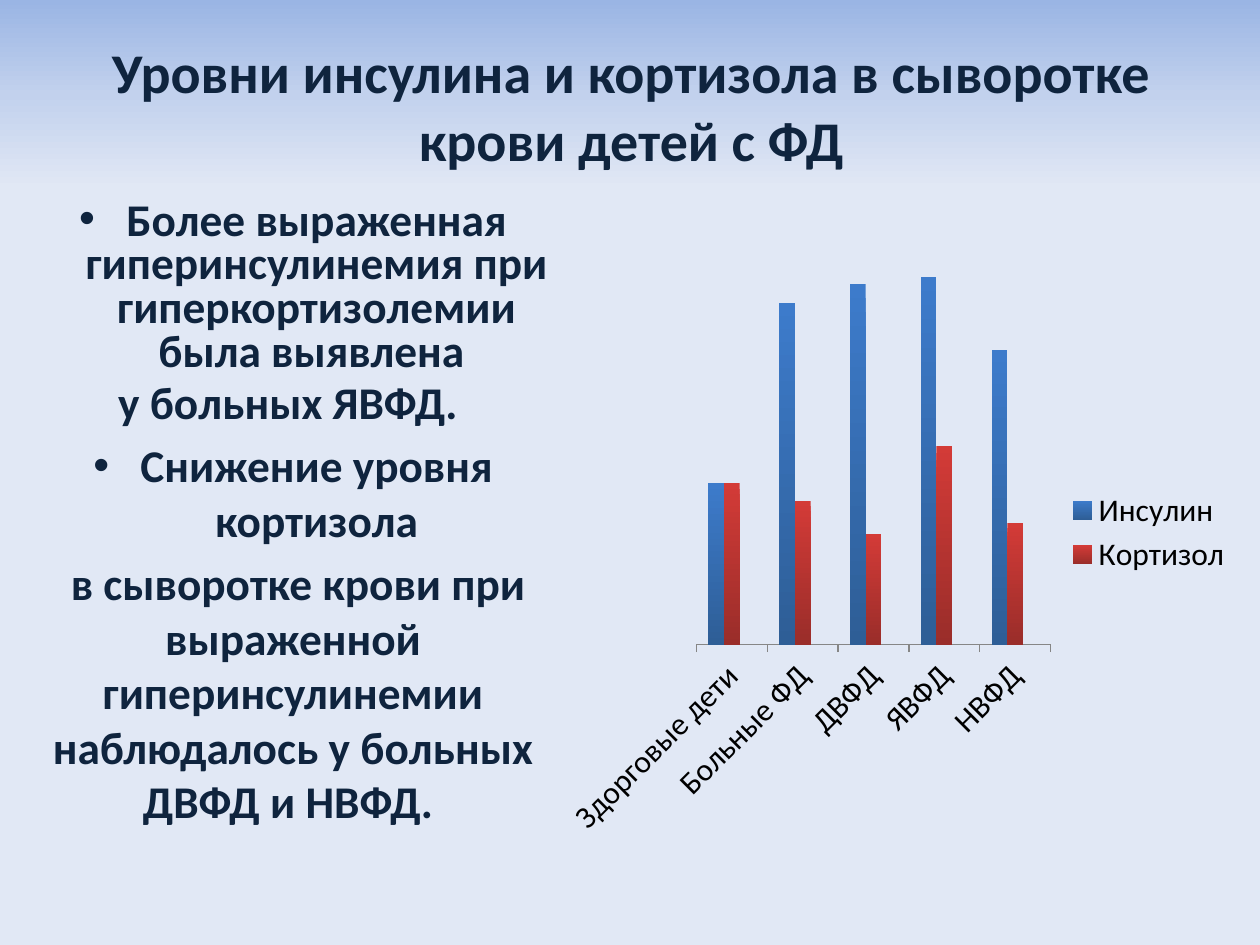
from copy import deepcopy

from lxml import etree
from pptx import Presentation
from pptx.chart.data import CategoryChartData
from pptx.dml.color import RGBColor
from pptx.enum.chart import XL_CHART_TYPE, XL_LEGEND_POSITION, XL_TICK_MARK
from pptx.enum.text import MSO_ANCHOR, MSO_AUTO_SIZE, PP_ALIGN
from pptx.oxml import parse_xml
from pptx.oxml.ns import nsdecls, qn
from pptx.util import Cm, Pt

COLUMNS = XL_CHART_TYPE.COLUMN_CLUSTERED
LEGEND_RIGHT = XL_LEGEND_POSITION.RIGHT
TICK_OUTSIDE, TICK_NONE = XL_TICK_MARK.OUTSIDE, XL_TICK_MARK.NONE
MIDDLE, TOP = MSO_ANCHOR.MIDDLE, MSO_ANCHOR.TOP
CENTER = PP_ALIGN.CENTER
TITLE_ONLY = 5

TITLE = "Уровни инсулина и кортизола в сыворотке крови детей с ФД"
FINDINGS = [
    {"text": "Более выраженная гиперинсулинемия при гиперкортизолемии была выявлена ",
     "bullet": True, "spacing": 0.8},
    {"text": "у больных ЯВФД. ", "bullet": False, "spacing": 0.8},
    {"text": "Снижение уровня кортизола", "bullet": True, "spacing": 1.0},
    {"text": " в сыворотке крови при выраженной гиперинсулинемии наблюдалось у больных ДВФД и НВФД. ",
     "bullet": False, "spacing": 1.0},
]
GROUPS = ["Здорговые дети", "Больные ФД", "ДВФД", "ЯВФД", "НВФД"]
LEVELS = {
    "Инсулин": [44, 93, 98, 100, 80],
    "Кортизол": [44, 39, 30, 54, 33],
    "Series 3": [None] * len(GROUPS),
}
EMPTY_SERIES = 2

THEME = {
    "font": "Calibri",
    "text": "0F243E",
    "chart_text": "000000",
    "axis": "868686",
    "background": [(0, "9AB5E4"), (0.1, "C2D1ED"), (0.2, "E1E8F5")],
    "series": [("3D7BCB", "2E5E96"), ("D33B37", "9A2D2A"), ("9BBB59", "9BBB59")],
    "title_size": 32,
    "body_size": 25.9,
    "chart_size": 18,
}
BOXES = {
    "title": (1.3, 0.53, 22.86, 3.18),
    "findings": (0.51, 3.94, 10.8, 14.4),
    "chart": (11.1, 4.45, 14, 12.57),
}
PLOT_AREA = {"x": 0.21, "y": 0.09, "w": 0.51, "h": 0.59}
BULLET_INDENT = Cm(0.95)


def color(value):
    return RGBColor.from_string(value)


def apply_format(target, values):
    for name, value in values.items():
        setattr(target, name, value)


def box(name):
    return dict(zip(("left", "top", "width", "height"), map(Cm, BOXES[name])))


def format_font(font, size, text_color, bold):
    apply_format(font, {"name": THEME["font"], "size": Pt(size), "bold": bold})
    font.color.rgb = color(text_color)


def fill_gradient(fill, stops):
    fill.gradient()
    fill.gradient_angle = 270
    first = fill.gradient_stops[0]._gs
    stop_list = first.getparent()
    while len(stop_list) < len(stops):
        stop_list.append(deepcopy(first))
    for stop, (position, value) in zip(fill.gradient_stops, stops):
        stop.position = position
        stop.color.rgb = color(value)


def set_bullet(paragraph, bullet):
    properties = paragraph._p.get_or_add_pPr()
    indent = BULLET_INDENT if bullet else 0
    properties.set("marL", str(indent))
    properties.set("indent", str(-indent))
    if bullet:
        etree.SubElement(properties, qn("a:buFont")).set("typeface", "Arial")
        etree.SubElement(properties, qn("a:buChar")).set("char", "•")
    else:
        etree.SubElement(properties, qn("a:buNone"))


def add_title(slide):
    title = slide.shapes.title
    apply_format(title, box("title"))
    apply_format(title.text_frame, {"text": TITLE, "vertical_anchor": MIDDLE,
                                    "word_wrap": True, "auto_size": MSO_AUTO_SIZE.NONE})
    paragraph = title.text_frame.paragraphs[0]
    paragraph.alignment = CENTER
    format_font(paragraph.runs[0].font, THEME["title_size"], THEME["text"], True)


def add_findings(slide):
    frame = slide.shapes.add_textbox(**box("findings")).text_frame
    apply_format(frame, {"word_wrap": True, "vertical_anchor": TOP})
    for index, finding in enumerate(FINDINGS):
        paragraph = frame.add_paragraph() if index else frame.paragraphs[0]
        run = paragraph.add_run()
        run.text = finding["text"]
        apply_format(paragraph, {"alignment": CENTER, "line_spacing": finding["spacing"],
                                 "space_before": Pt(THEME["body_size"] * 0.2)})
        format_font(run.font, THEME["body_size"], THEME["text"], True)
        set_bullet(paragraph, finding["bullet"])


def place_plot_area(chart):
    plot_area = chart._chartSpace.chart.plotArea
    for layout in plot_area.findall(qn("c:layout")):
        plot_area.remove(layout)
    sizes = "".join(f'<c:{side} val="{value}"/>' for side, value in PLOT_AREA.items())
    plot_area.insert(0, parse_xml(
        f'<c:layout {nsdecls("c")}><c:manualLayout><c:layoutTarget val="inner"/>'
        f'<c:xMode val="edge"/><c:yMode val="edge"/>{sizes}</c:manualLayout></c:layout>'))


def add_legend(chart):
    chart.has_legend = True
    apply_format(chart.legend, {"position": LEGEND_RIGHT, "include_in_layout": False})
    chart.legend._element.find(qn("c:legendPos")).addnext(parse_xml(
        f'<c:legendEntry {nsdecls("c")}><c:idx val="{EMPTY_SERIES}"/>'
        '<c:delete val="1"/></c:legendEntry>'))


def add_levels_chart(slide):
    data = CategoryChartData()
    data.categories = GROUPS
    for name, values in LEVELS.items():
        data.add_series(name, values)
    position = box("chart")
    chart = slide.shapes.add_chart(COLUMNS, position["left"], position["top"],
                                   position["width"], position["height"], data).chart
    chart.has_title = False
    format_font(chart.font, THEME["chart_size"], THEME["chart_text"], False)

    plot = chart.plots[0]
    apply_format(plot, {"gap_width": 150, "overlap": 0, "vary_by_categories": False})
    for series, (upper, lower) in zip(plot.series, THEME["series"]):
        fill_gradient(series.format.fill, [(0, upper), (1, lower)])

    apply_format(chart.value_axis, {"visible": False, "has_major_gridlines": False,
                                    "minimum_scale": 0, "maximum_scale": 100})
    axis = chart.category_axis
    apply_format(axis, {"major_tick_mark": TICK_OUTSIDE, "minor_tick_mark": TICK_NONE})
    axis.format.line.color.rgb = color(THEME["axis"])
    format_font(axis.tick_labels.font, THEME["chart_size"], THEME["chart_text"], False)
    axis._element.find(qn("c:txPr")).find(qn("a:bodyPr")).set("rot", str(-45 * 60000))

    place_plot_area(chart)
    add_legend(chart)


def main():
    presentation = Presentation()
    apply_format(presentation, {"slide_width": Cm(25.4), "slide_height": Cm(19.05)})
    slide = presentation.slides.add_slide(presentation.slide_layouts[TITLE_ONLY])
    fill_gradient(slide.background.fill, THEME["background"])
    add_title(slide)
    add_findings(slide)
    add_levels_chart(slide)
    presentation.save("out.pptx")


if __name__ == "__main__":
    main()
